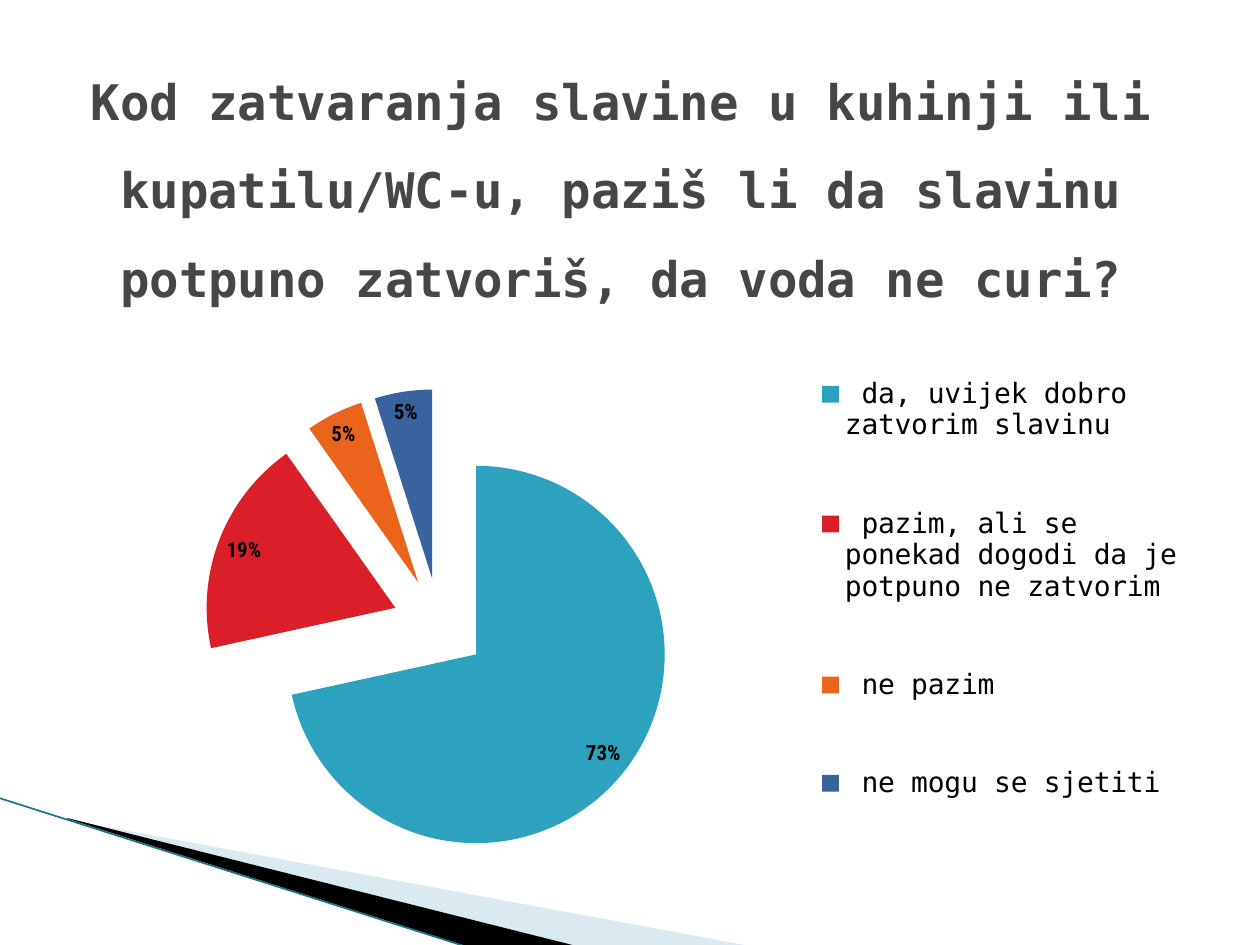
from lxml.etree import SubElement
from pptx import Presentation
from pptx.chart.data import CategoryChartData
from pptx.dml.color import RGBColor
from pptx.enum.chart import XL_CHART_TYPE as ChartType
from pptx.enum.chart import XL_LABEL_POSITION as LabelPosition
from pptx.enum.chart import XL_LEGEND_POSITION as LegendPosition
from pptx.enum.shapes import MSO_CONNECTOR as Connector
from pptx.enum.text import MSO_ANCHOR as Anchor
from pptx.enum.text import PP_ALIGN as Align
from pptx.oxml import parse_xml
from pptx.oxml.ns import nsdecls, qn
from pptx.util import Pt

# Content
TITLE = ("Kod zatvaranja slavine u kuhinji ili kupatilu/WC-u, "
         "paziš li da slavinu potpuno zatvoriš, da voda ne curi?")
ANSWERS = [
    (" da, uvijek dobro zatvorim slavinu", 73, "teal"),
    (" pazim, ali se ponekad dogodi da je potpuno ne zatvorim", 19, "red"),
    (" ne pazim", 5, "orange"),
    (" ne mogu se sjetiti ", 5, "blue"),
]
COLORS = {
    "teal": "2DA2BF", "red": "DA1F28", "orange": "EB641B", "blue": "39639D",
    "title": "464646", "text": "000000", "pale": "A0CBDC", "edge": "1B7289",
}
MONO, LABEL_FONT = "DejaVu Sans Mono", "Roboto Condensed"

# Places in px: left, top, width, height
SCALE = 914400 // 126
TITLE_BOX = (54, 125, 1134, 157)
CHART_BOX = (64, 255, 1134, 624)
PIE_BOX = (204, 389, 472, 472)
LEGEND_BOX = (811, 312, 376, 554)
WEDGES = [
    ([(69, 820), (750, 946), (575, 946), (69, 819)], "pale", 40),
    ([(67, 818), (576, 946), (469, 947), (68, 819)], "text", 100),
]
EDGE = [(-1, 798), (467, 947)]


def px(*values):
    return [value * SCALE for value in values]


def color(name):
    return RGBColor.from_string(COLORS[name])


def style(font, size, name, face=MONO, bold=False):
    font.size, font.name, font.bold = Pt(size), face, bold
    font.color.rgb = color(name)


def explosion():
    return parse_xml(f'<c:explosion {nsdecls("c")} val="25"/>')


def place(part, box):
    """Set a chart part's layout as fractions of the chart."""
    left, top, width, height = CHART_BOX
    x, y, w, h = box
    sizes = {"x": (x - left) / width, "y": (y - top) / height,
             "w": w / width, "h": h / height}
    inner = '<c:layoutTarget val="inner"/>' if part.tag == qn("c:plotArea") else ""
    modes = '<c:xMode val="edge"/><c:yMode val="edge"/>'
    values = "".join(f'<c:{key} val="{val:.3f}"/>' for key, val in sizes.items())
    for old in part.findall(qn("c:layout")):
        part.remove(old)
    layout = parse_xml(f'<c:layout {nsdecls("c")}><c:manualLayout>{inner}{modes}'
                       f'{values}</c:manualLayout></c:layout>')
    part.insert(0 if inner else 1, layout)


deck = Presentation()
deck.slide_width, deck.slide_height = px(1260, 945)
page = deck.slides.add_slide(deck.slide_layouts[6])

# Corner wedges
for points, name, opacity in WEDGES:
    start, *rest = [tuple(px(*point)) for point in points]
    builder = page.shapes.build_freeform(*start)
    builder.add_line_segments(rest, close=True)
    wedge = builder.convert_to_shape()
    wedge.shadow.inherit = False
    wedge.fill.solid()
    wedge.fill.fore_color.rgb = color(name)
    wedge.line.fill.background()
    if opacity < 100:
        tint = wedge.fill._xPr.find(".//" + qn("a:srgbClr"))
        SubElement(tint, qn("a:alpha"), val=str(opacity * 1000))

edge = page.shapes.add_connector(Connector.STRAIGHT, *px(*EDGE[0], *EDGE[1]))
edge.line.color.rgb = color("edge")
edge.line.width = Pt(0.95)
SubElement(edge._element.spPr, qn("a:effectLst"))

# Title, raised by a deep bottom margin
box = page.shapes.add_textbox(*px(*TITLE_BOX))
frame = box.text_frame
frame.word_wrap = True
frame.vertical_anchor = Anchor.MIDDLE
frame.margin_top, frame.margin_bottom = px(0, 58)
para = frame.paragraphs[0]
para.alignment, para.line_spacing = Align.CENTER, 1.5
span = para.add_run()
span.text = TITLE
style(span.font, 28, "title", bold=True)

# Pie chart
data = CategoryChartData()
data.categories = [answer for answer, _, _ in ANSWERS]
data.add_series("Series 1", [share for _, share, _ in ANSWERS])
chart = page.shapes.add_chart(ChartType.PIE, *px(*CHART_BOX), data).chart
chart.has_title = False
style(chart.font, 18, "text")

plot = chart.plots[0]
plot.vary_by_categories = True
series = plot.series[0]
for index, (_, _, name) in enumerate(ANSWERS):
    fill = series.points[index].format.fill
    fill.solid()
    fill.fore_color.rgb = color(name)
slices = series._element.findall(qn("c:dPt"))
slices[0].addprevious(explosion())
for part in slices:
    part.find(qn("c:spPr")).addprevious(explosion())

# Rounded shares add up to 102, so labels show the values
plot.has_data_labels = True
labels = plot.data_labels
labels.show_percentage, labels.show_value = False, True
labels.number_format, labels.number_format_is_linked = '0"%"', False
labels.position = LabelPosition.BEST_FIT
style(labels.font, 12, "text", LABEL_FONT, True)

# Legend
chart.has_legend = True
legend = chart.legend
legend.position, legend.include_in_layout = LegendPosition.RIGHT, False
style(legend.font, 16, "text")
place(legend._element, LEGEND_BOX)
place(chart._chartSpace.chart.plotArea, PIE_BOX)

deck.save("out.pptx")
